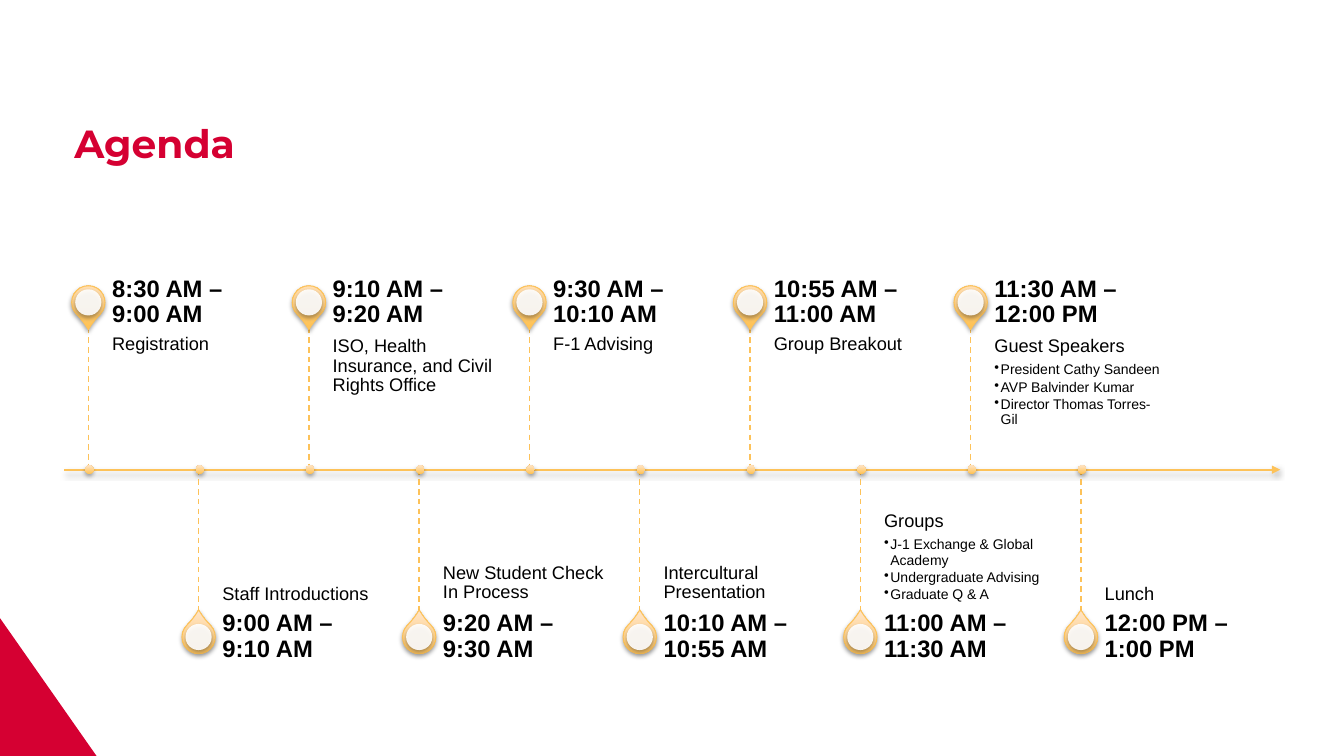
"""Build an agenda slide with ten sessions alternating above and below a time axis."""
import lxml.etree
import pptx
import pptx.dml.color
import pptx.enum.dml
import pptx.enum.shapes
import pptx.enum.text
import pptx.oxml.ns
import pptx.util

Pt = pptx.util.Pt
RGBColor = pptx.dml.color.RGBColor
qn = pptx.oxml.ns.qn
SHAPE = pptx.enum.shapes.MSO_SHAPE
STRAIGHT = pptx.enum.shapes.MSO_CONNECTOR.STRAIGHT
ANCHOR = pptx.enum.text.MSO_ANCHOR

RED = RGBColor(0xD5, 0x00, 0x32)
GOLD = RGBColor(0xFD, 0xC2, 0x59)
DEEP_GOLD = RGBColor(0xFF, 0xC3, 0x57)
PALE_GOLD = RGBColor(0xFF, 0xE3, 0xC3)
BLACK = RGBColor(0, 0, 0)
WHITE = RGBColor(0xFF, 0xFF, 0xFF)

AXIS_Y = 335.5
FIRST_X = 63.1
STEP = 78.78
BRANCH = 101.5
TIME_HEIGHT = 36
PIN = 23.8
HOLE = 18.7
DOT = 6

SESSIONS = [
    ("8:30 AM – 9:00 AM", "Registration", []),
    ("9:00 AM – 9:10 AM", "Staff Introductions", []),
    ("9:10 AM – 9:20 AM", "ISO, Health Insurance, and Civil Rights Office", []),
    ("9:20 AM – 9:30 AM", "New Student Check In Process", []),
    ("9:30 AM – 10:10 AM", "F-1 Advising", []),
    ("10:10 AM – 10:55 AM", "Intercultural Presentation", []),
    ("10:55 AM – 11:00 AM", "Group Breakout", []),
    ("11:00 AM – 11:30 AM", "Groups",
     ["J-1 Exchange & Global Academy", "Undergraduate Advising", "Graduate Q & A"]),
    ("11:30 AM – 12:00 PM", "Guest Speakers",
     ["President Cathy Sandeen", "AVP Balvinder Kumar", "Director Thomas Torres-Gil"]),
    ("12:00 PM – 1:00 PM", "Lunch", []),
]


def set_effects(shape, shadowed):
    properties = shape._element.spPr
    effects = lxml.etree.SubElement(properties, qn("a:effectLst"))
    if shadowed:
        shadow = lxml.etree.SubElement(
            effects, qn("a:outerShdw"), blurRad=str(Pt(3.1)), dist=str(Pt(1.8)),
            dir="5400000", algn="ctr", rotWithShape="0")
        color = lxml.etree.SubElement(shadow, qn("a:srgbClr"), val="000000")
        lxml.etree.SubElement(color, qn("a:alpha"), val="35000")


def add_text(left, top, height, lines, size, bold, anchor, margins):
    box = slide.shapes.add_textbox(Pt(left), Pt(top), Pt(124.6), Pt(height))
    frame = box.text_frame
    frame.word_wrap = True
    frame.vertical_anchor = anchor
    frame.margin_left = 0
    frame.margin_top, frame.margin_right, frame.margin_bottom = [Pt(m) for m in margins]
    frame.text = "\n".join(lines)
    for index, paragraph in enumerate(frame.paragraphs):
        paragraph.line_spacing = 0.9
        paragraph.space_after = Pt(1.5 if index else size * 0.35)
        if index:
            paragraph.level = 1
            settings = paragraph._p.get_or_add_pPr()
            settings.set("marL", str(Pt(4.5)))
            settings.set("indent", str(Pt(-4.5)))
            lxml.etree.SubElement(settings, qn("a:buChar"), char="•")
        font = paragraph.runs[0].font
        font.name = "Arial"
        font.size = Pt(10 if index else size)
        font.bold = bold
        font.color.rgb = BLACK


presentation = pptx.Presentation()
presentation.slide_width = Pt(960)
presentation.slide_height = Pt(540)
slide = presentation.slides.add_slide(presentation.slide_layouts[5])

builder = slide.shapes.build_freeform(Pt(0), Pt(441.5))
builder.add_line_segments([(Pt(69), Pt(540)), (Pt(0), Pt(540))])
corner = builder.convert_to_shape()
corner.fill.solid()
corner.fill.fore_color.rgb = RED
corner.line.fill.background()
corner.shadow.inherit = False

title = slide.shapes.title
title.left, title.top, title.width, title.height = Pt(46), Pt(55.5), Pt(868), Pt(93.5)
title.text_frame.text = "Agenda"
title.text_frame.vertical_anchor = ANCHOR.MIDDLE
title.text_frame.paragraphs[0].alignment = pptx.enum.text.PP_ALIGN.LEFT
title_font = title.text_frame.paragraphs[0].runs[0].font
title_font.name = "Montserrat"
title_font.size = Pt(28)
title_font.bold = True
title_font.color.rgb = RED

axis = slide.shapes.add_connector(STRAIGHT, Pt(46), Pt(AXIS_Y), Pt(914.5), Pt(AXIS_Y))
axis.line.color.rgb = GOLD
axis.line.width = Pt(1.5)
lxml.etree.SubElement(axis.line._get_or_add_ln(), qn("a:tailEnd"), type="triangle")
set_effects(axis, True)

for number, (time, topic, details) in enumerate(SESSIONS):
    above = number % 2 == 0
    x = FIRST_X + number * STEP
    branch_end = AXIS_Y - BRANCH if above else AXIS_Y + BRANCH
    time_top = branch_end - TIME_HEIGHT if above else branch_end
    pin_y = time_top + TIME_HEIGHT / 2

    branch = slide.shapes.add_connector(
        STRAIGHT, Pt(x), Pt(min(AXIS_Y, branch_end)), Pt(x), Pt(max(AXIS_Y, branch_end)))
    branch.line.color.rgb = GOLD
    branch.line.width = Pt(1)
    branch.line.dash_style = pptx.enum.dml.MSO_LINE.DASH
    set_effects(branch, False)

    for kind, center_x, center_y, size in (
            (SHAPE.TEAR, x, pin_y, PIN),
            (SHAPE.OVAL, x, pin_y, HOLE),
            (SHAPE.OVAL, x + 0.8, AXIS_Y, DOT)):
        marker = slide.shapes.add_shape(
            kind, Pt(center_x - size / 2), Pt(center_y - size / 2), Pt(size), Pt(size))
        if size == HOLE:
            marker.fill.solid()
            marker.fill.fore_color.rgb = WHITE
            color = marker._element.spPr.find(".//" + qn("a:srgbClr"))
            lxml.etree.SubElement(color, qn("a:alpha"), val="90000")
        else:
            marker.fill.gradient()
            marker.fill.gradient_angle = 90
            for stop, shade in zip(marker.fill.gradient_stops, (DEEP_GOLD, PALE_GOLD)):
                stop.color.rgb = shade
            marker._element.spPr.find(qn("a:gradFill")).set("rotWithShape", "0")
        if kind == SHAPE.TEAR:
            marker.adjustments[0] = 1.15
            marker.rotation = 135 if above else 315
            marker.line.color.rgb = GOLD
            marker.line.width = Pt(0.75)
        else:
            marker.line.fill.background()
        set_effects(marker, True)

    add_text(x + 17, min(AXIS_Y, branch_end), BRANCH, [topic, *details], 13, False,
             ANCHOR.TOP if above else ANCHOR.BOTTOM,
             (6.5, 6.5, 10) if above else (10, 0, 6.5))
    add_text(x + 17, time_top, TIME_HEIGHT, [time], 17, True, ANCHOR.MIDDLE, (0, 8.6, 0))

presentation.save("out.pptx")
